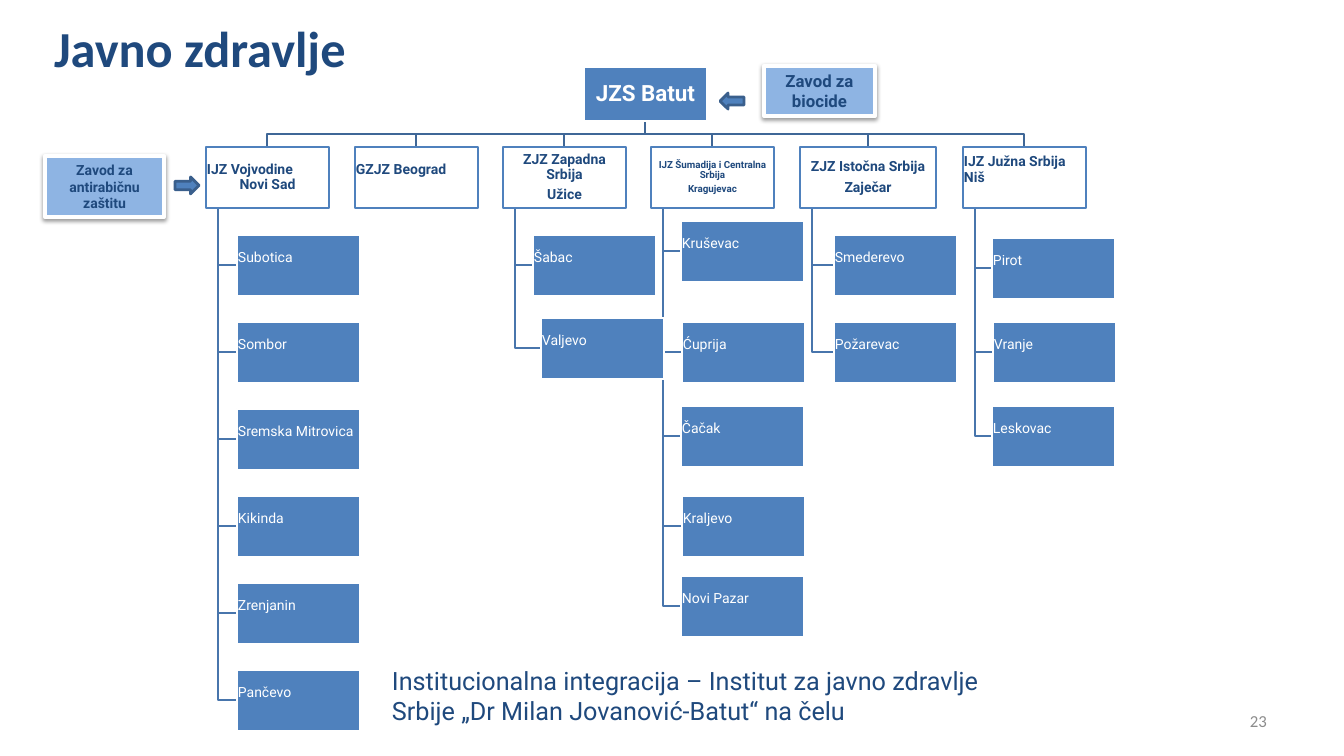
"""Builds the slide on the network of public health institutes in Serbia."""
from dataclasses import dataclass

from pptx import Presentation
from pptx.dml.color import RGBColor
from pptx.enum.shapes import MSO_SHAPE
from pptx.enum.text import MSO_ANCHOR, PP_ALIGN
from pptx.oxml import parse_xml
from pptx.oxml.ns import nsdecls, qn
from pptx.util import Pt

PX = 914400 / 100.8
LEFT, CENTER, RIGHT = PP_ALIGN.LEFT, PP_ALIGN.CENTER, PP_ALIGN.RIGHT
TOP, MIDDLE = MSO_ANCHOR.TOP, MSO_ANCHOR.MIDDLE
RECT, ARROW = MSO_SHAPE.RECTANGLE, MSO_SHAPE.RIGHT_ARROW

NAVY, BLUE, PALE, WHITE, GREY = "1F497D", "4F81BD", "8EB4E3", "FFFFFF", "8C8C8C"
BUS, BRANCH, ARROW_EDGE = "3F6797", "4875AC", "3A5F8C"
ROOT_X, ROOT_BOTTOM, BUS_Y, HEAD_Y = 645, 121, 134, 147
BOX_W, BOX_H, SPINE_INSET, LIFT = 123, 61, 12, 15


@dataclass
class Style:
    """Look of a piece of text."""
    size: int
    color: str
    bold: bool = False
    font: str = "Roboto"
    spacing: float = 1.0
    gap: float = 0.0


@dataclass
class Line:
    """One paragraph."""
    text: str
    align: PP_ALIGN = CENTER


@dataclass
class Office:
    """A local office below a regional institute."""
    name: str
    x: int
    y: int


@dataclass
class Institute:
    """A regional institute and its offices."""
    x: int
    lines: list[Line]
    offices: list[Office]
    width: int = BOX_W
    size: int = 10
    gap: float = 3.5
    lift: int = 0


@dataclass
class Note:
    """A side institute with the arrow that leads to the chart."""
    text: str
    box: tuple[int, int, int, int]
    size: int
    arrow: tuple[int, int, int, int]
    rotation: int


VOJVODINA = ["Subotica", "Sombor", "Sremska Mitrovica", "Kikinda", "Zrenjanin", "Pančevo"]
INSTITUTES = [
    Institute(206, [Line("IJZ Vojvodine", LEFT), Line("Novi Sad")],
              [Office(name, 237, 235 + 87 * row) for row, name in enumerate(VOJVODINA)], gap=0),
    Institute(355, [Line("GZJZ Beograd", LEFT)], [], lift=LIFT),
    Institute(503, [Line("ZJZ Zapadna Srbija"), Line("Užice")],
              [Office("Šabac", 533, 235), Office("Valjevo", 541, 318)]),
    Institute(651, [Line("IJZ Šumadija i Centralna Srbija"), Line("Kragujevac")],
              [Office("Kruševac", 681, 221), Office("Ćuprija", 682, 322),
               Office("Čačak", 681, 406), Office("Kraljevo", 682, 496),
               Office("Novi Pazar", 681, 576)], size=7, gap=2.5),
    Institute(800, [Line("ZJZ Istočna Srbija"), Line("Zaječar")],
              [Office("Smederevo", 834, 235), Office("Požarevac", 834, 322)], width=136),
    Institute(963, [Line("IJZ Južna Srbija", LEFT), Line("Niš", LEFT)],
              [Office("Pirot", 992, 238), Office("Vranje", 993, 322),
               Office("Leskovac", 992, 406)], gap=0, lift=LIFT),
]
NOTES = [
    Note("Zavod za antirabičnu zaštitu", (45, 156, 119, 61), 10, (175, 177, 24, 17), 0),
    Note("Zavod za biocide", (764, 66, 111, 50), 12, (720, 93, 24, 16), 180),
]


def px(*lengths: int) -> list[int]:
    """Turn px lengths into EMU."""
    return [round(length * PX) for length in lengths]


def rgb(color: str) -> RGBColor:
    """Turn a hex string into a colour."""
    return RGBColor.from_string(color)


def write(frame, lines: list[Line], style: Style, anchor=MIDDLE, margins=(10, 5, 10, 5)) -> None:
    """Put styled paragraphs into a text frame."""
    frame.word_wrap = True
    frame.vertical_anchor = anchor
    (frame.margin_left, frame.margin_top,
     frame.margin_right, frame.margin_bottom) = px(*margins)
    for index, line in enumerate(lines):
        paragraph = frame.add_paragraph() if index else frame.paragraphs[0]
        paragraph.alignment = line.align
        paragraph.line_spacing = style.spacing
        paragraph.space_before = Pt(0)
        paragraph.space_after = Pt(style.gap)
        run = paragraph.add_run()
        run.text = line.text
        run.font.name = style.font
        run.font.size = Pt(style.size)
        run.font.bold = style.bold
        run.font.color.rgb = rgb(style.color)


def add_block(slide, kind, box, fill: str, edge: str, weight: int = 2):
    """Add a filled and outlined shape without shadow."""
    block = slide.shapes.add_shape(kind, *px(*box))
    block.shadow.inherit = False
    block.fill.solid()
    block.fill.fore_color.rgb = rgb(fill)
    block.line.color.rgb = rgb(edge)
    block.line.width = Pt(weight)
    return block


def add_unit(slide, box, lines: list[Line], style: Style, fill: str, edge: str,
             lift: int = 0) -> None:
    """Add a box of the chart, its text raised by half the lift."""
    unit = add_block(slide, RECT, box, fill, edge)
    write(unit.text_frame, lines, style, margins=(1, 1, 1, 1 + lift))


def add_elbow(slide, points: list[tuple[int, int]], color: str) -> None:
    """Add an open right-angled line through the points."""
    builder = slide.shapes.build_freeform(*points[0], scale=PX)
    builder.add_line_segments(points[1:], close=False)
    elbow = builder.convert_to_shape()
    elbow.shadow.inherit = False
    elbow.fill.background()
    elbow.line.color.rgb = rgb(color)
    elbow.line.width = Pt(2)


def add_links(slide, institute: Institute) -> None:
    """Link an institute with the root and with its offices."""
    middle = institute.x + institute.width // 2
    spine = institute.x + SPINE_INSET
    add_elbow(slide, [(ROOT_X, ROOT_BOTTOM), (ROOT_X, BUS_Y), (middle, BUS_Y),
                      (middle, HEAD_Y)], BUS)
    for office in institute.offices:
        level = office.y + BOX_H // 2
        add_elbow(slide, [(spine, HEAD_Y + BOX_H), (spine, level), (office.x, level)], BRANCH)


def add_institute(slide, institute: Institute) -> None:
    """Add the boxes of an institute and its offices."""
    add_unit(slide, (institute.x, HEAD_Y, institute.width, BOX_H), institute.lines,
             Style(institute.size, NAVY, True, spacing=0.9, gap=institute.gap),
             WHITE, BLUE, institute.lift)
    for office in institute.offices:
        add_unit(slide, (office.x, office.y, BOX_W, BOX_H), [Line(office.name, LEFT)],
                 Style(10, WHITE, spacing=0.9), BLUE, WHITE, LIFT)


def add_note(slide, note: Note) -> None:
    """Add a side institute with a soft shadow, and its arrow."""
    card = add_block(slide, RECT, note.box, PALE, WHITE, 3)
    card.element.spPr.find(qn("a:effectLst")).append(parse_xml(
        f'<a:outerShdw {nsdecls("a")} blurRad="39370" dist="20320" dir="5400000" '
        'rotWithShape="0"><a:srgbClr val="000000"><a:alpha val="38000"/></a:srgbClr>'
        '</a:outerShdw>'))
    write(card.text_frame, [Line(note.text)], Style(note.size, NAVY, True))
    arrow = add_block(slide, ARROW, note.arrow, BLUE, ARROW_EDGE)
    arrow.rotation = note.rotation


def main() -> None:
    """Build and save the slide."""
    deck = Presentation()
    deck.slide_width, deck.slide_height = px(1344, 756)
    slide = deck.slides.add_slide(deck.slide_layouts[5])
    title = slide.shapes.title
    title.left, title.top, title.width, title.height = px(44, 12, 1207, 119)
    write(title.text_frame, [Line("Javno zdravlje", LEFT)],
          Style(36, NAVY, True, "Calibri"), TOP)
    for institute in INSTITUTES:
        add_links(slide, institute)
    add_unit(slide, (584, 67, BOX_W, 54), [Line("JZS Batut")],
             Style(16, WHITE, True, spacing=0.9), BLUE, WHITE)
    for institute in INSTITUTES:
        add_institute(slide, institute)
    for note in NOTES:
        add_note(slide, note)
    summary = slide.shapes.add_textbox(*px(382, 660, 654, 71))
    write(summary.text_frame,
          [Line("Institucionalna integracija – Institut za javno zdravlje "
                "Srbije „Dr Milan Jovanović-Batut“ na čelu", LEFT)], Style(18, NAVY), TOP)
    page_number = slide.shapes.add_textbox(*px(964, 701, 313, 40))
    write(page_number.text_frame, [Line("23", RIGHT)], Style(12, GREY, font="Calibri"))
    deck.save("out.pptx")


if __name__ == "__main__":
    main()
